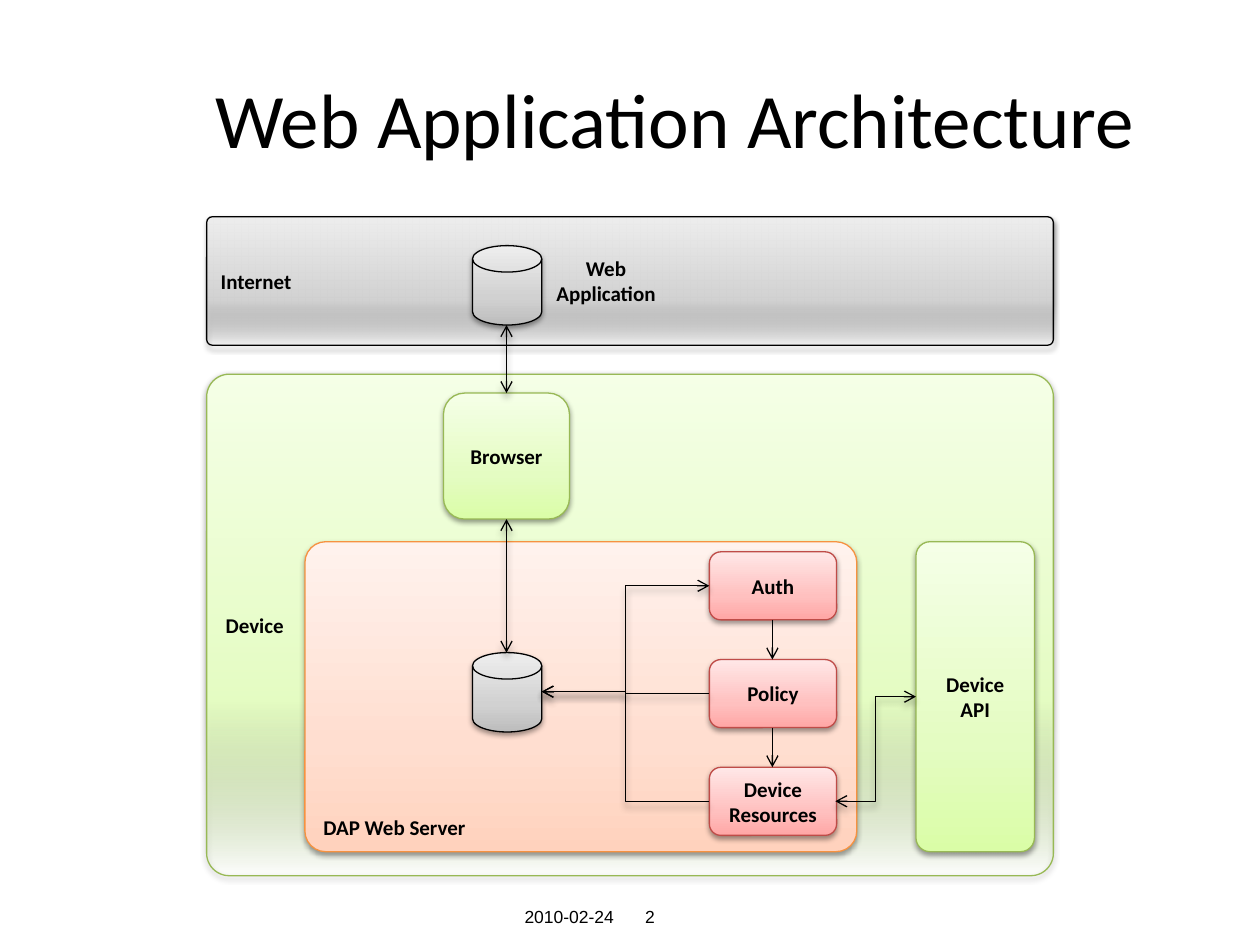
from dataclasses import dataclass

from pptx import Presentation, util as u
from pptx.dml.color import RGBColor
from pptx.enum import shapes as sh, text as tx
from pptx.oxml import parse_xml
from pptx.oxml.ns import nsdecls

# The slide is a grid of 100 columns by 75 rows.
COLS, ROWS = 100, 75
CELL = u.Inches(0.1)
BLACK = "000000"
ROUND = sh.MSO_SHAPE.ROUNDED_RECTANGLE
DISK = sh.MSO_SHAPE.FLOWCHART_MAGNETIC_DISK
LEFT, MID, RIGHT = tx.PP_ALIGN.LEFT, tx.PP_ALIGN.CENTER, tx.PP_ALIGN.RIGHT
CENTRE, LOW = tx.MSO_ANCHOR.MIDDLE, tx.MSO_ANCHOR.BOTTOM


@dataclass(frozen=True)
class Tone:
    low: str
    mid: str
    top: str
    edge: str


GREY = Tone("BDBDBD", "D1D1D1", "EEEEEE", BLACK)
GREEN = Tone("DAFDA7", "E4FCC2", "F5FFE7", "98B955")
PEACH = Tone("FFD2BD", "FFDED0", "FFF2ED", "F69240")
PINK = Tone("FFA6A5", "FFC0BF", "FFE7E7", "BF4C48")


@dataclass(frozen=True)
class Box:
    col: float
    row: float
    wide: float
    high: float
    tone: Tone
    label: str = ""
    align: tx.PP_ALIGN = MID
    anchor: tx.MSO_ANCHOR = CENTRE
    adj: float = 0.167
    kind: sh.MSO_SHAPE = ROUND
    clear: bool = False  # fades out towards the bottom


@dataclass(frozen=True)
class Link:
    start: tuple[float, float]
    end: tuple[float, float]
    both: bool = False
    bent: bool = False
    shade: bool = True


def cells(*sizes: float) -> list[int]:
    return [round(size * CELL) for size in sizes]


def color(code: str) -> RGBColor:
    return RGBColor.from_string(code)


def write(frame, label: str, size: float, font: str, align, bold=False) -> None:
    frame.text = label
    for para in frame.paragraphs:
        para.alignment = align
        para.font.size = u.Pt(size)
        para.font.name = font
        para.font.bold = bold
        para.font.color.rgb = color(BLACK)


def shadow(alpha: int, blur: float, dist: float):
    return parse_xml(
        f'<a:outerShdw {nsdecls("a")} blurRad="{u.Pt(blur)}" dist="{u.Pt(dist)}" '
        f'dir="5400000" rotWithShape="0"><a:srgbClr val="{BLACK}">'
        f'<a:alpha val="{alpha * 1000}"/></a:srgbClr></a:outerShdw>')


def shading(tone: Tone, clear: bool):
    """Vertical gradient, with the first stop at the bottom."""
    fade = '<a:alpha val="0"/>' if clear else ""
    stops = ((0, tone.low, fade), (35, tone.mid, ""), (100, tone.top, ""))
    body = "".join(f'<a:gs pos="{pos * 1000}"><a:srgbClr val="{code}">{extra}'
                   f'</a:srgbClr></a:gs>' for pos, code, extra in stops)
    return parse_xml(f'<a:gradFill {nsdecls("a")} rotWithShape="1"><a:gsLst>{body}'
                     f'</a:gsLst><a:lin ang="16200000" scaled="0"/></a:gradFill>')


def draw_box(slide, box: Box) -> None:
    shape = slide.shapes.add_shape(
        box.kind, *cells(box.col, box.row, box.wide, box.high))
    if box.kind == ROUND:
        shape.adjustments[0] = box.adj
    props = shape._element.spPr
    props.insert(2, shading(box.tone, box.clear))
    shape.line.color.rgb = color(box.tone.edge)
    shape.line.width = u.Pt(0.75)
    shape.shadow.inherit = False
    props[-1].append(shadow(38, 3.1, 1.6))
    if box.label:
        write(shape.text_frame, box.label, 12, "Calibri", box.align, True)
        shape.text_frame.vertical_anchor = box.anchor


def draw_link(slide, link: Link) -> None:
    kind = sh.MSO_CONNECTOR.ELBOW if link.bent else sh.MSO_CONNECTOR.STRAIGHT
    line = slide.shapes.add_connector(kind, *cells(*link.start, *link.end))
    line.line.color.rgb = color(BLACK)
    line.line.width = u.Pt(0.75)
    for end in ("headEnd", "tailEnd") if link.both else ("tailEnd",):
        line.line._ln.append(parse_xml(f'<a:{end} {nsdecls("a")} type="arrow"/>'))
    effect = parse_xml(f'<a:effectLst {nsdecls("a")}/>')
    if link.shade:
        effect.append(shadow(40, 4, 3))
    line._element.spPr.append(effect)


def add_text(slide, place, label, size, font, align, bold=False):
    frame = slide.shapes.add_textbox(*cells(*place)).text_frame
    frame.word_wrap = True
    write(frame, label, size, font, align, bold)
    return frame


STEP, FIRST, TALL = 8.55, 43.8, 5.4
STEPS = [FIRST + i * STEP for i in range(3)]
NAMES = ("Auth", "Policy", "Device\nResources")

BOXES = [
    Box(16.4, 17.2, 67.2, 10.2, GREY, "Internet", LEFT, adj=0.045, clear=True),
    Box(16.4, 29.7, 67.2, 39.8, GREEN, "Device", LEFT, adj=0.045, clear=True),
    Box(37.5, 19.5, 5.5, 6.3, GREY, kind=DISK),
    Box(35.2, 31.2, 10, 10, GREEN, "Browser"),
    Box(24.2, 43, 43.8, 24.6, PEACH, "DAP Web Server", LEFT, LOW, 0.067),
    *(Box(56.3, row, 10.1, TALL, PINK, name) for row, name in zip(STEPS, NAMES)),
    Box(72.7, 43, 9.4, 24.6, GREEN, "Device\nAPI", adj=0.118),
    Box(37.5, 51.8, 5.5, 6.3, GREY, kind=DISK),
]

STORE = (43, 54.9)
AUTH, POLICY, DEVICE = ((56.3, row + TALL / 2) for row in STEPS)
LINKS = [
    Link((40.2, 31.2), (40.2, 25.8), both=True),
    Link((40.2, 41.2), (40.2, 51.8), both=True),
    *(Link((61.3, row + TALL), (61.3, row + STEP), shade=False)
      for row in STEPS[:2]),
    Link((66.3, DEVICE[1]), (72.7, 55.3), both=True, bent=True),
    Link(STORE, AUTH, bent=True),
    Link(DEVICE, STORE, bent=True),
    Link(POLICY, STORE, bent=True),
]


def main() -> None:
    deck = Presentation()
    deck.slide_width, deck.slide_height = cells(COLS, ROWS)
    slide = deck.slides.add_slide(deck.slide_layouts[5])

    title = slide.shapes.title
    title.left, title.top, title.width, title.height = cells(8.6, 3.1, 90, 12.5)
    write(title.text_frame, "Web Application Architecture", 44, "Calibri", MID)
    title.text_frame.vertical_anchor = CENTRE

    for box in BOXES:
        draw_box(slide, box)
    for link in LINKS:
        draw_link(slide, link)

    app = add_text(slide, (43, 20.3, 10.2, 3.9), "Web\nApplication",
                   12, "Calibri", MID, True)
    app.vertical_anchor = CENTRE

    for col, label, align in ((36.9, "2010-02-24", RIGHT), (51.2, "2", LEFT)):
        foot = add_text(slide, (col, 71.2, 11.8, 2.1), label, 10, "Arial", align)
        foot.margin_left = foot.margin_right = 0
        foot.margin_top = foot.margin_bottom = 0
        foot.paragraphs[0].line_spacing = u.Pt(17)

    deck.save("out.pptx")


if __name__ == "__main__":
    main()
